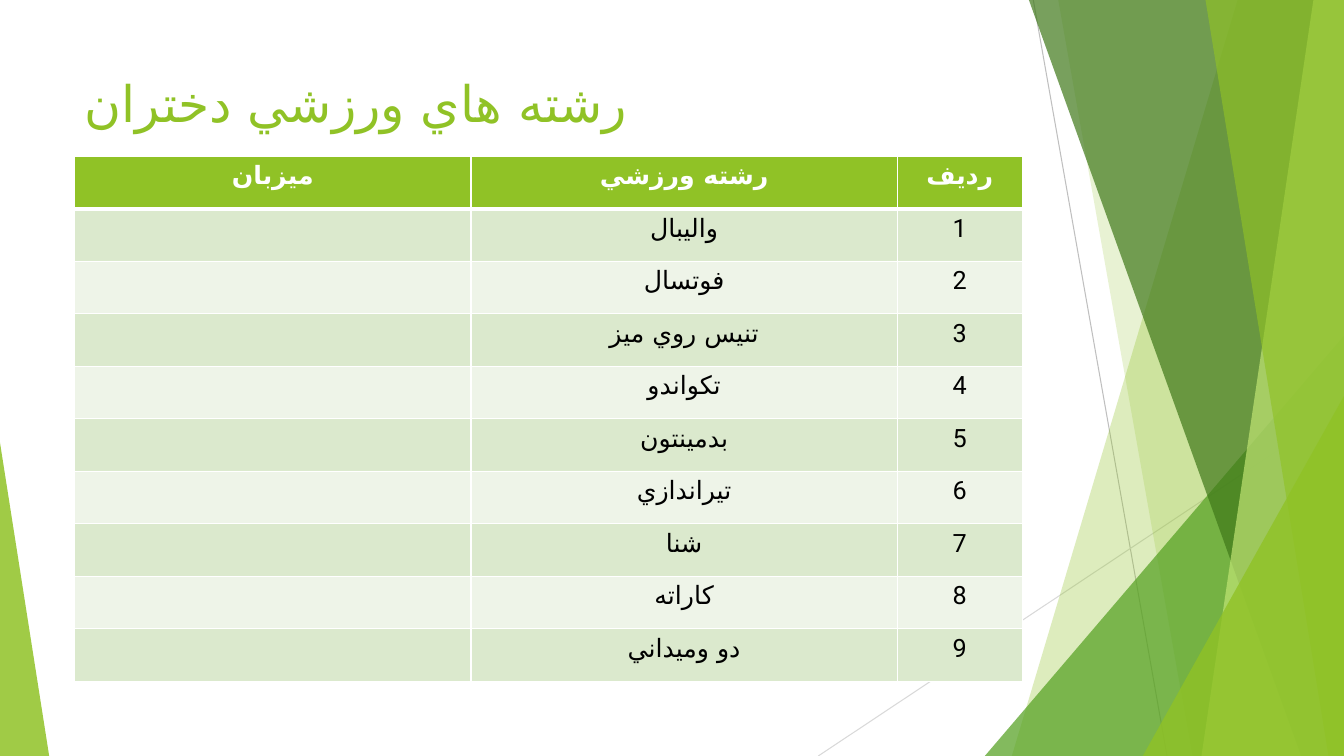
"""Build a slide listing the girls' sports with a green faceted backdrop."""
from dataclasses import dataclass

from lxml import etree
from pptx import Presentation
from pptx import util as u
from pptx.dml.color import RGBColor
from pptx.enum import shapes, text
from pptx.oxml import ns

Cm = u.Cm


@dataclass(frozen=True)
class Theme:
    font: str = "Roboto"
    arabic_font: str = "DejaVu Sans"
    title_size: int = 36
    table_size: int = 18
    green: str = "90C226"
    grass: str = "54A021"
    forest: str = "3F7819"
    lime: str = "C0E474"
    white: str = "FFFFFF"
    black: str = "000000"
    bands: tuple = ("DBE9CD", "EEF4E8")
    rules: tuple = ("BFBFBF", "D9D9D9")


def paint(sp, color, opacity):
    sp.shadow.inherit = False
    sp.fill.solid()
    sp.fill.fore_color.rgb = RGBColor.from_string(color)
    sp.line.fill.background()
    clr = sp._element.spPr.find(".//" + ns.qn("a:srgbClr"))
    etree.SubElement(clr, ns.qn("a:alpha"), val=str(opacity * 1000))


def style(p, size, color, bold=False):
    for r in p.runs:
        r.font.name = theme.font
        r.font.size = u.Pt(size)
        r.font.bold = bold
        r.font.color.rgb = RGBColor.from_string(color)
        etree.SubElement(r._r.get_or_add_rPr(), ns.qn("a:cs"), typeface=theme.arabic_font)


theme = Theme()
WIDTH, HEIGHT = 33.87, 19.05
prs = Presentation()
prs.slide_width, prs.slide_height = Cm(WIDTH), Cm(HEIGHT)
s = prs.slides.add_slide(prs.slide_layouts[6])

rules = [(26.04, 0, 29.41, HEIGHT), (WIDTH, 10.24, 20.62, HEIGHT)]
for ends, color in zip(rules, theme.rules):
    line = s.shapes.add_connector(shapes.MSO_CONNECTOR.STRAIGHT, *map(Cm, ends))
    line.line.color.rgb = RGBColor.from_string(color)
    line.line.width = u.Pt(0.75)
    etree.SubElement(line._element.spPr, ns.qn("a:effectLst"))

facets = [
    ("band", 31.19, 25.5, theme.green, 30),
    ("band", 26.67, 30.05, theme.green, 20),
    ("corner", 24.82, 8.46, theme.grass, 72),
    ("band", 25.93, 32.79, theme.forest, 70),
    ("band", 33.1, 30.28, theme.lime, 70),
    ("band", 30.38, 33.48, theme.green, 65),
    ("corner", 28.8, 9.98, theme.green, 80),
]
for kind, a, b, color, opacity in facets:
    if kind == "band":
        fb = s.shapes.build_freeform(Cm(a), 0)
        fb.add_line_segments([(Cm(WIDTH), 0), (Cm(WIDTH), Cm(HEIGHT)), (Cm(b), Cm(HEIGHT))])
        sp = fb.convert_to_shape()
    else:
        sp = s.shapes.add_shape(shapes.MSO_SHAPE.ISOSCELES_TRIANGLE,
                                Cm(a), Cm(b), Cm(WIDTH - a), Cm(HEIGHT - b))
        sp.adjustments[0] = 1
    paint(sp, color, opacity)

sp = s.shapes.add_shape(shapes.MSO_SHAPE.ISOSCELES_TRIANGLE, 0, Cm(11.15), Cm(1.24), Cm(7.9))
sp.adjustments[0] = 0
paint(sp, theme.green, 85)

tf = s.shapes.add_textbox(Cm(1.88), Cm(1.7), Cm(23.88), Cm(2.57)).text_frame
tf.word_wrap = True
tf.text = "رشته هاي ورزشي دختران"
tf.paragraphs[0].alignment = text.PP_ALIGN.LEFT
style(tf.paragraphs[0], theme.title_size, theme.green)

sports = ["واليبال", "فوتسال", "تنيس روي ميز", "تکواندو", "بدمينتون",
          "تيراندازي", "شنا", "کاراته", "دو وميداني"]
rows = [("ميزبان", "رشته ورزشي", "رديف")]
rows += [("", sport, str(n)) for n, sport in enumerate(sports, 1)]
widths = [9.99, 10.74, 3.15]
table_height = 13.23

table = s.shapes.add_table(len(rows), len(widths), Cm(1.88), Cm(3.94),
                           Cm(sum(widths)), Cm(table_height)).table
for col, width in zip(table.columns, widths):
    col.width = Cm(width)
for i, values in enumerate(rows):
    table.rows[i].height = Cm(table_height / len(rows))
    header = i == 0
    for j, value in enumerate(values):
        cell = table.cell(i, j)
        cell.text = value
        p = cell.text_frame.paragraphs[0]
        p.alignment = text.PP_ALIGN.CENTER
        p.font.size = u.Pt(theme.table_size)
        style(p, theme.table_size, theme.white if header else theme.black, header)
        tcPr = cell._tc.get_or_add_tcPr()
        for side in ("lnL", "lnR", "lnT", "lnB"):
            thick = (i, side) in ((0, "lnB"), (1, "lnT"))
            ln = etree.SubElement(tcPr, ns.qn("a:" + side), w=str(u.Pt(3 if thick else 1)))
            fill = etree.SubElement(ln, ns.qn("a:solidFill"))
            etree.SubElement(fill, ns.qn("a:srgbClr"), val=theme.white)
        cell.fill.solid()
        color = theme.green if header else theme.bands[(i - 1) % 2]
        cell.fill.fore_color.rgb = RGBColor.from_string(color)

prs.save("out.pptx")
